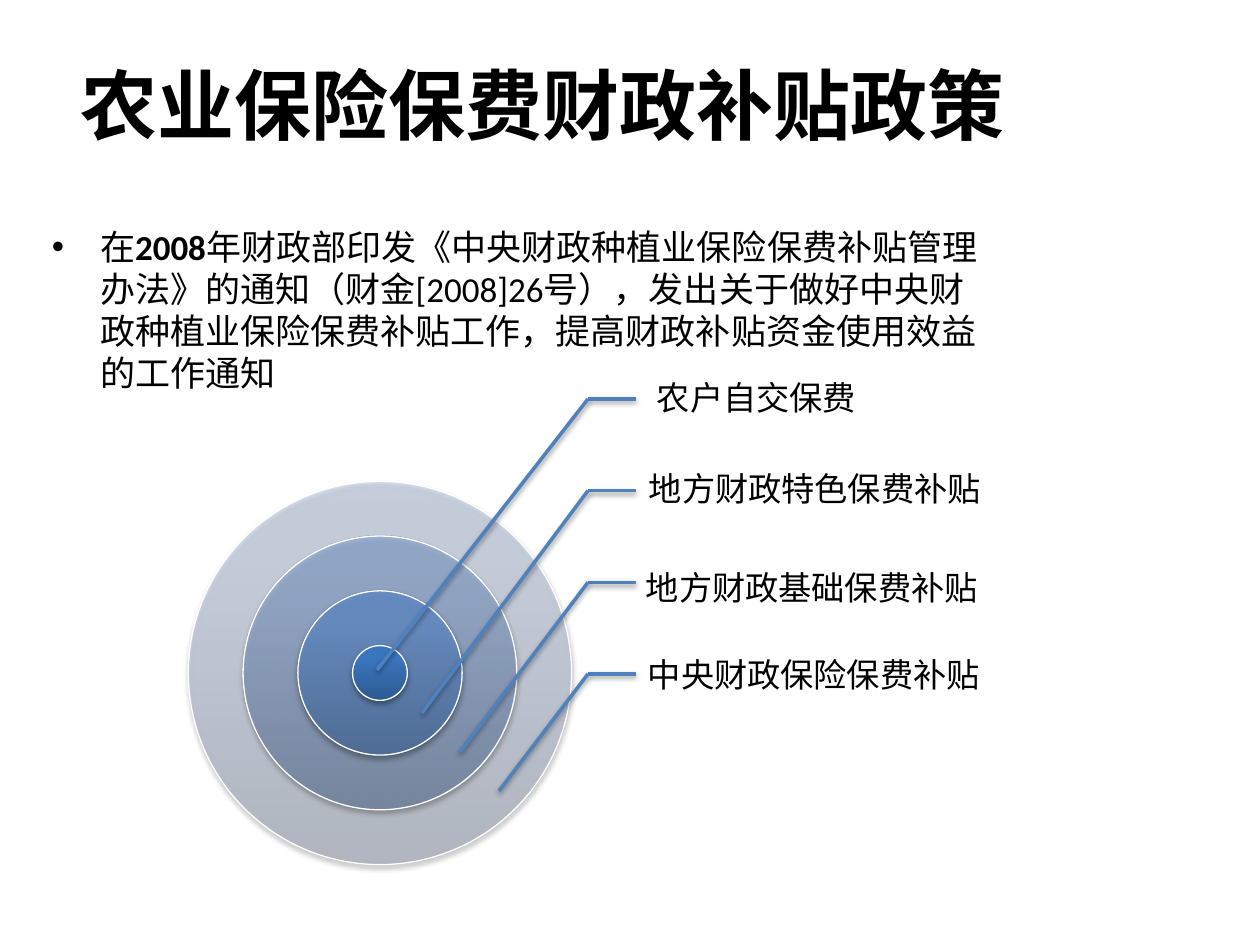
"""Build the slide on premium subsidies for farm insurance."""
from lxml import etree
from pptx import Presentation
from pptx.dml.color import RGBColor
from pptx.enum.shapes import MSO_CONNECTOR, MSO_SHAPE
from pptx.enum.text import MSO_ANCHOR, PP_ALIGN
from pptx.oxml.ns import qn
from pptx.util import Pt

PX = 9144000 // 1260
OVAL = MSO_SHAPE.OVAL
LINE = MSO_CONNECTOR.STRAIGHT
TOP, MIDDLE = MSO_ANCHOR.TOP, MSO_ANCHOR.MIDDLE
CENTER = PP_ALIGN.CENTER

COLORS = {"text": "000000", "rim": "FFFFFF", "lead": "4F81BD"}
BODY, HEAD = "Calibri", "Noto Sans CJK SC"

TITLE = [("农业保险保费财政补贴政策", True)]
NOTE = [
    ("在", False),
    ("2008", True),
    ("年财政部印发《中央财政种植业保险保费补贴管理办法》的通知（财金[2008]26号），"
     "发出关于做好中央财政种植业保险保费补贴工作，提高财政补贴资金使用效益的工作通知", False),
]
RINGS = [
    (7, 50, ("8E98AC", "B8C6DF", "B8C6E1")),
    (5, 67, ("6E82A2", "8FA9D2", "8FAAD5")),
    (3, 83, ("4E6E9A", "658FC8", "648FCA")),
    (1, 100, ("2D5B92", "3A76BE", "3876C2")),
]
STOPS = (0, 80, 100)
LABELS = [
    ("农户自交保费", (638, 354, 266, 92), (377, 670)),
    ("地方财政特色保费补贴", (630, 445, 365, 92), (422, 713)),
    ("地方财政基础保费补贴", (627, 544, 368, 92), (460, 752)),
    ("中央财政保险保费补贴", (629, 631, 367, 92), (499, 791)),
]
MID_X, MID_Y, UNIT = 380, 673, 54.75
KNEE, TIP, ROW, STEP = 588, 636, 399, 91.67


def px(*nums):
    return [round(n * PX) for n in nums]


def rgb(name):
    return RGBColor.from_string(COLORS[name])


def add(parent, tag, **attrs):
    return etree.SubElement(parent, qn(tag), {k: str(v) for k, v in attrs.items()})


def tint(parent, color, alpha):
    node = add(parent, "a:srgbClr", val=color)
    add(node, "a:alpha", val=alpha * 1000)


def shade(props, alpha, dist):
    effects = add(props, "a:effectLst")
    drop = add(effects, "a:outerShdw", blurRad=Pt(3.1), dist=Pt(dist),
               dir=5400000, rotWithShape=0)
    tint(drop, COLORS["text"], alpha)


def write(shapes, box, runs, size, face, anchor=TOP, insets=(13, 6, 13, 6)):
    frame = shapes.add_textbox(*px(*box)).text_frame
    frame.word_wrap = True
    frame.vertical_anchor = anchor
    (frame.margin_left, frame.margin_top,
     frame.margin_right, frame.margin_bottom) = px(*insets)
    para = frame.paragraphs[0]
    for text, bold in runs:
        run = para.add_run()
        run.text = text
        font = run.font
        font.name, font.size, font.bold = face, Pt(size), bold
        font.color.rgb = rgb("text")
        add(run._r.get_or_add_rPr(), "a:ea", typeface=face)
    return para


def ring(shapes, scale, alpha, tones):
    size = UNIT * scale
    disc = shapes.add_shape(
        OVAL, *px(MID_X - size / 2, MID_Y - size / 2, size, size))
    disc.fill.gradient()
    disc.fill.gradient_angle = 90
    disc.line.color.rgb = rgb("rim")
    disc.line.width = Pt(0.75)
    props = disc._element.spPr
    stops = props.find(qn("a:gradFill")).find(qn("a:gsLst"))
    for old in list(stops):
        stops.remove(old)
    for pos, tone in zip(STOPS, tones):
        tint(add(stops, "a:gs", pos=pos * 1000), tone, alpha)
    shade(props, 35, 1.8)


def lead(shapes, start, end):
    link = shapes.add_connector(LINE, *px(*start, *end))
    link.line.color.rgb = rgb("lead")
    link.line.width = Pt(2)
    shade(link._element.spPr, 38, 1.6)


def main():
    deck = Presentation()
    deck.slide_width, deck.slide_height = px(1260, 945)
    slide = deck.slides.add_slide(deck.slide_layouts[6])
    shapes = slide.shapes

    title = write(shapes, (-24, 62, 1134, 157), TITLE, 44, HEAD)
    title.alignment = CENTER
    title.line_spacing = 0.9

    note = write(shapes, (39, 219, 954, 624), NOTE, 20, BODY)
    props = note._p.get_or_add_pPr()
    props.set("marL", str(48 * PX))
    props.set("indent", str(-48 * PX))
    add(props, "a:buFont", typeface="Arial")
    add(props, "a:buChar", char="•")

    group = shapes.add_group_shape().shapes
    for item in RINGS:
        ring(group, *item)
    for i, (text, box, end) in enumerate(LABELS):
        para = write(group, box, [(text, False)], 19, BODY, MIDDLE, (19, 4, 4, 4))
        para.line_spacing = 0.9
        para.space_after = Pt(6.65)
        knee = (KNEE, ROW + i * STEP)
        lead(group, knee, (TIP, knee[1]))
        lead(group, knee, end)

    deck.save("out.pptx")


if __name__ == "__main__":
    main()
